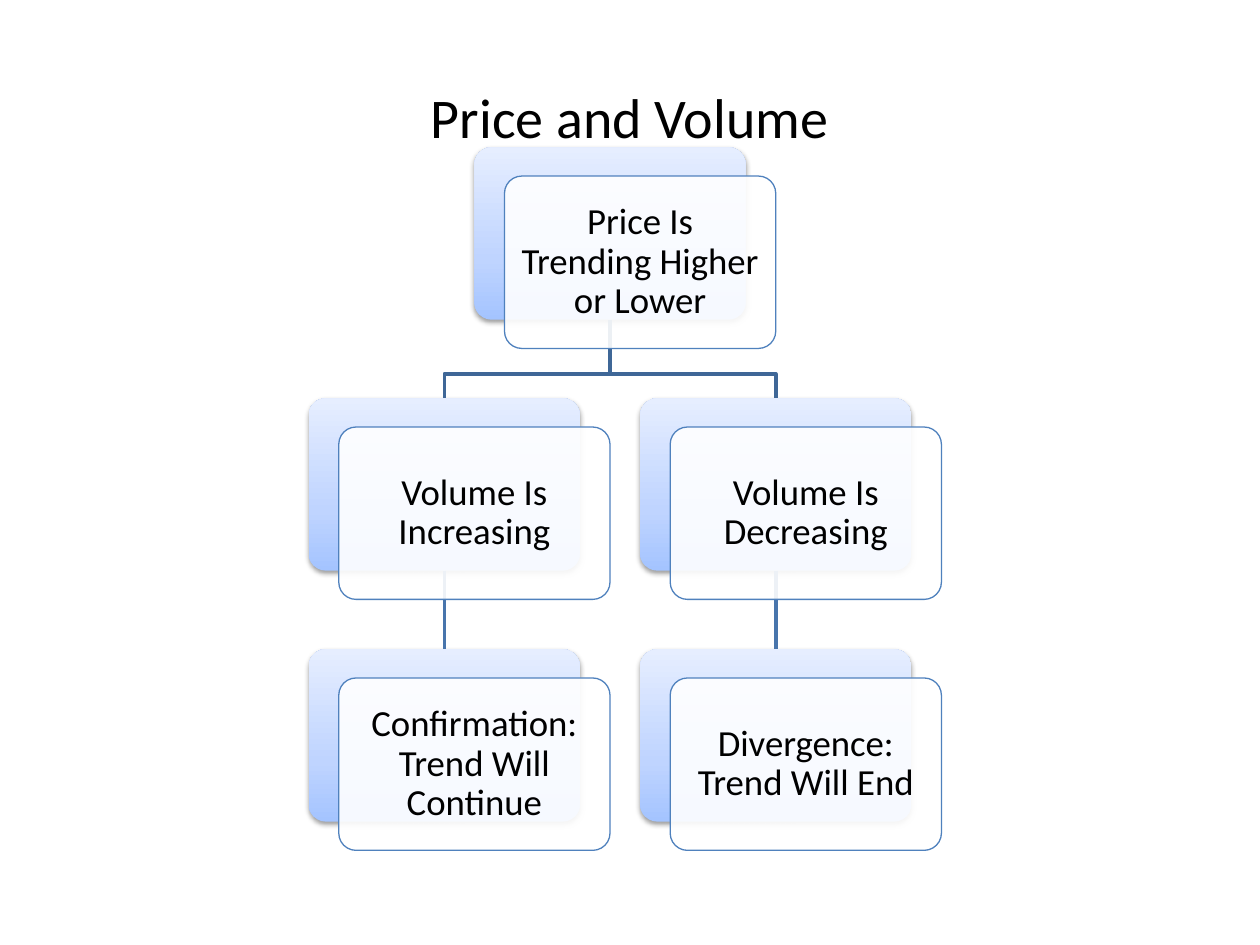
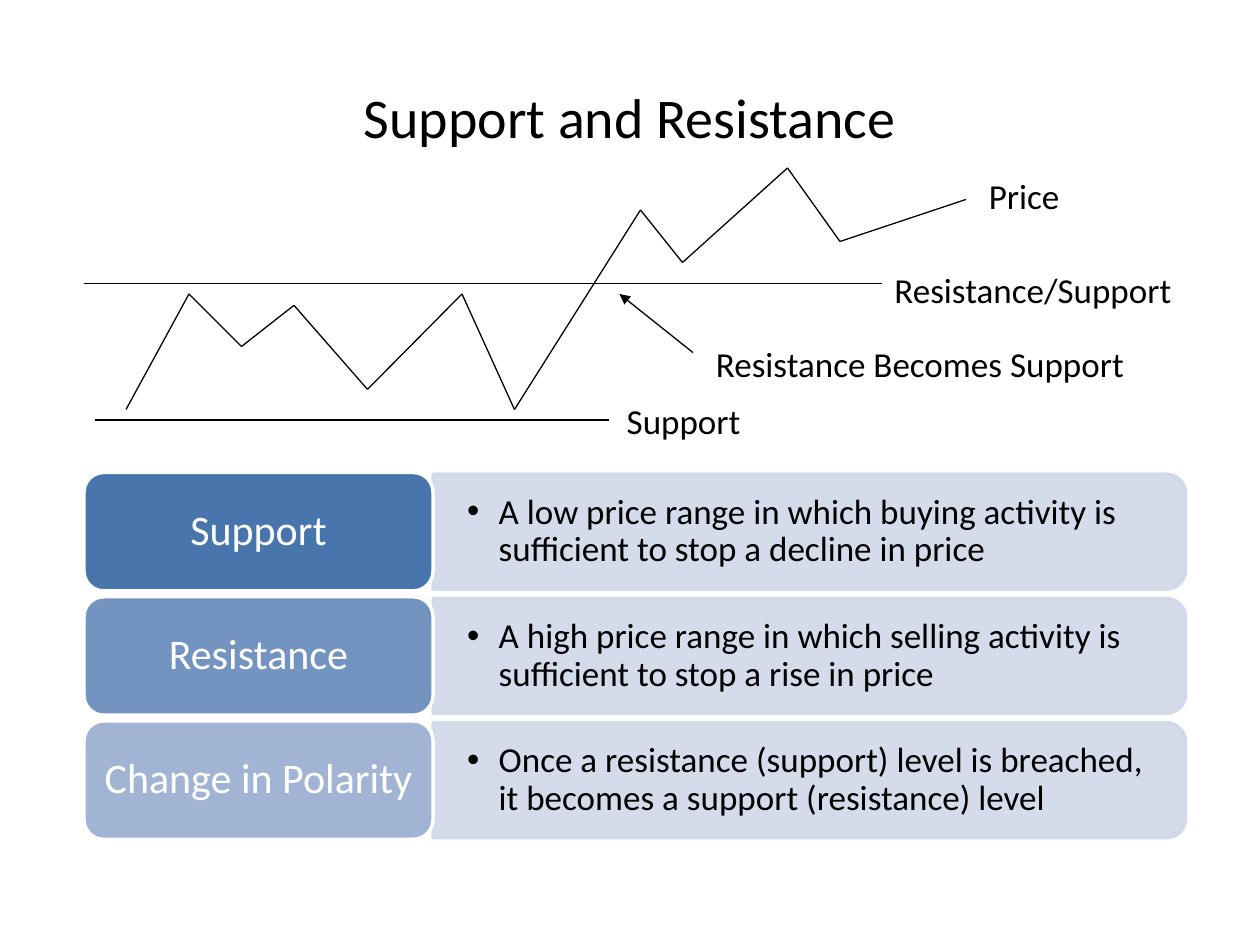
from copy import deepcopy
from dataclasses import dataclass
from itertools import pairwise
from typing import NamedTuple

from lxml import etree
from pptx import Presentation
from pptx.dml.color import RGBColor
from pptx.enum import shapes, text
from pptx.oxml.ns import qn
from pptx.util import Pt

FONT = "Calibri"
BLACK = RGBColor(0x00, 0x00, 0x00)
WHITE = RGBColor(0xFF, 0xFF, 0xFF)
ACCENT = RGBColor(0x4F, 0x81, 0xBD)
STEM = RGBColor(0x48, 0x75, 0xAC)
ELBOW = RGBColor(0x3F, 0x67, 0x97)
STEEL = RGBColor(0x73, 0x93, 0xC1)
MIST = RGBColor(0xA2, 0xB4, 0xD4)
PALE = RGBColor(0xD0, 0xD8, 0xE8)
SKY_DARK = RGBColor(0xA4, 0xC4, 0xFF)
SKY_MID = RGBColor(0xBF, 0xD4, 0xFF)
SKY_LIGHT = RGBColor(0xE6, 0xEE, 0xFF)

CARD_W, CARD_H = 155, 98.5
CARD_LEFT, CARD_TOP = 176.4, 84.2
COL_STEP, ROW_STEP = 189.4, 143.4
FRONT_DX, FRONT_DY = 17.2, 16.4
ELBOW_DROP = 31

TERM_LEFT, TERM_TOP, TERM_W, TERM_H = 48, 270, 199.5, 67.7
TERM_STEP = 71
BAR_W, BAR_H = 430, 65.7
NOTE_W, NOTE_H = 426, 59


class Point(NamedTuple):
    x: float
    y: float


class Box(NamedTuple):
    x: float
    y: float
    w: float
    h: float

    def points(self) -> list[Pt]:
        return [Pt(v) for v in self]


@dataclass
class Card:
    label: str
    col: float
    row: int

    @property
    def back(self) -> Box:
        return Box(CARD_LEFT + self.col * COL_STEP,
                   CARD_TOP + self.row * ROW_STEP, CARD_W, CARD_H)

    @property
    def front(self) -> Box:
        return Box(self.back.x + FRONT_DX, self.back.y + FRONT_DY, CARD_W, CARD_H)


@dataclass
class Term:
    name: str
    meaning: str
    color: RGBColor


@dataclass
class Label:
    label: str
    x: float
    y: float
    w: float


TREND = Card("Price Is Trending Higher or Lower", 0.5, 0)
BRANCHES = [
    (Card("Volume Is Increasing", 0, 1),
     Card("Confirmation: Trend Will Continue", 0, 2)),
    (Card("Volume Is Decreasing", 1, 1),
     Card("Divergence: Trend Will End", 1, 2)),
]

TERMS = [
    Term("Support", "A low price range in which buying activity is "
         "sufficient to stop a decline in price", STEM),
    Term("Resistance", "A high price range in which selling activity is "
         "sufficient to stop a rise in price", STEEL),
    Term("Change in Polarity", "Once a resistance (support) level is breached, "
         "it becomes a support (resistance) level", MIST),
]

PRICE = [Point(*xy) for xy in (
    (72, 234), (108, 168), (138, 198), (168, 174.5), (210, 222.5), (264, 168),
    (294, 234), (366, 120), (390, 150), (450, 96), (480, 138), (552, 114))]
SUPPORT_LINE = Point(54, 240), Point(348, 240)
RESISTANCE_LINE = Point(48, 162), Point(504, 162)
CALLOUT = Point(396, 201.5), Point(354, 168)

LABELS = [
    Label("Support", 351, 225, 204),
    Label("Resistance Becomes Support", 402, 192, 300),
    Label("Resistance/Support", 504, 150, 198),
    Label("Price", 558, 96, 84),
]


def set_alpha(fmt_element, percent: int) -> None:
    for clr in fmt_element.iter(qn("a:srgbClr")):
        etree.SubElement(clr, qn("a:alpha"), val=str(percent * 1000))


def write(sp, content: str, size: float, color: RGBColor = BLACK,
          align=text.PP_ALIGN.CENTER, anchor=text.MSO_ANCHOR.MIDDLE,
          spacing: float | None = None, inset: Point | None = None):
    tf = sp.text_frame
    tf.word_wrap = True
    tf.vertical_anchor = anchor
    if inset:
        tf.margin_left = tf.margin_right = Pt(inset.x)
        tf.margin_top = tf.margin_bottom = Pt(inset.y)
    p = tf.paragraphs[0]
    p.text = content
    p.alignment = align
    p.line_spacing = spacing
    for r in p.runs:
        r.font.name = FONT
        r.font.size = Pt(size)
        r.font.color.rgb = color
    return p


def add_title(slide, content: str) -> None:
    write(slide.shapes.add_textbox(*Box(36, 21.6, 648, 90).points()), content, 32)


def add_shape(slide, kind, box: Box, fill: RGBColor,
              line: RGBColor | None, width: float = 2):
    sp = slide.shapes.add_shape(kind, *box.points())
    sp.shadow.inherit = False
    sp.fill.solid()
    sp.fill.fore_color.rgb = fill
    if line is None:
        sp.line.fill.background()
    else:
        sp.line.color.rgb = line
        sp.line.width = Pt(width)
    return sp


def add_line(slide, start: Point, end: Point, color: RGBColor = BLACK,
             width: float = 0.75, arrow: bool = False):
    cn = slide.shapes.add_connector(
        shapes.MSO_CONNECTOR.STRAIGHT, *(Pt(v) for v in (*start, *end)))
    cn.line.color.rgb = color
    cn.line.width = Pt(width)
    if arrow:
        etree.SubElement(cn.line._get_or_add_ln(), qn("a:tailEnd"), type="triangle")
    etree.SubElement(cn.element.spPr, qn("a:effectLst"))
    return cn


def add_card_back(slide, card: Card):
    sp = add_shape(slide, shapes.MSO_SHAPE.ROUNDED_RECTANGLE, card.back, SKY_MID, None)
    sp.adjustments[0] = 0.1
    sp.fill.gradient()
    sp.fill.gradient_angle = 90
    first, last = sp.fill.gradient_stops
    first.color.rgb, last.color.rgb = SKY_DARK, SKY_LIGHT
    first.position, last.position = 0, 1
    stops = sp.element.spPr.find(f".//{qn('a:gsLst')}")
    middle = deepcopy(stops[0])
    middle.set("pos", "35000")
    middle.find(qn("a:srgbClr")).set("val", str(SKY_MID))
    stops.insert(1, middle)
    shadow = etree.SubElement(
        sp.element.spPr.find(qn("a:effectLst")), qn("a:outerShdw"),
        blurRad=str(Pt(3.1)), dist=str(Pt(1.6)), dir="5400000", rotWithShape="0")
    etree.SubElement(shadow, qn("a:srgbClr"), val=str(BLACK))
    set_alpha(shadow, 38)
    return sp


def add_card_front(slide, card: Card) -> None:
    sp = add_shape(slide, shapes.MSO_SHAPE.ROUNDED_RECTANGLE, card.front,
                   WHITE, ACCENT, 0.75)
    sp.adjustments[0] = 0.1
    set_alpha(sp.element.spPr.find(qn("a:solidFill")), 90)
    write(sp, card.label, 21, spacing=0.9, inset=Point(6.3, 6.3))


def add_elbow(slide, parent: Card, child: Card) -> None:
    start_x = parent.back.x + CARD_W / 2
    end_x = child.back.x + CARD_W / 2
    start_y = parent.back.y + CARD_H
    bend_y = start_y + ELBOW_DROP
    fb = slide.shapes.build_freeform(Pt(start_x), Pt(start_y))
    fb.add_line_segments(
        [(Pt(start_x), Pt(bend_y)), (Pt(end_x), Pt(bend_y)),
         (Pt(end_x), Pt(child.back.y))], close=False)
    sp = fb.convert_to_shape()
    sp.shadow.inherit = False
    sp.fill.background()
    sp.line.color.rgb = ELBOW
    sp.line.width = Pt(2)


def add_term(slide, term: Term, index: int) -> None:
    top = TERM_TOP + index * TERM_STEP
    mid_y = top + TERM_H / 2
    bar_left = TERM_LEFT + TERM_W
    bar = add_shape(slide, shapes.MSO_SHAPE.ROUND_2_SAME_RECTANGLE,
                    Box(bar_left + (BAR_W - BAR_H) / 2, mid_y - BAR_W / 2, BAR_H, BAR_W),
                    PALE, PALE)
    bar.rotation = 90
    set_alpha(bar.element.spPr, 90)

    note = slide.shapes.add_textbox(
        *Box(bar_left, mid_y - NOTE_H / 2, NOTE_W, NOTE_H).points())
    p = write(note, term.meaning, 20, align=text.PP_ALIGN.LEFT,
              spacing=0.9, inset=Point(19.5, 10))
    p.level = 1
    props = p._p.get_or_add_pPr()
    props.set("marL", str(Pt(18)))
    props.set("indent", str(Pt(-18)))
    etree.SubElement(props, qn("a:buFont"), typeface="Arial")
    etree.SubElement(props, qn("a:buChar"), char="•")

    pill = add_shape(slide, shapes.MSO_SHAPE.ROUNDED_RECTANGLE,
                     Box(TERM_LEFT, top, TERM_W, TERM_H), term.color, WHITE)
    write(pill, term.name, 24, WHITE, spacing=0.9)


def add_label(slide, label: Label) -> None:
    sp = slide.shapes.add_textbox(*Box(label.x, label.y, label.w, 31.5).points())
    write(sp, label.label, 20, align=text.PP_ALIGN.LEFT, anchor=text.MSO_ANCHOR.TOP)
    sp.text_frame.auto_size = text.MSO_AUTO_SIZE.SHAPE_TO_FIT_TEXT


def build_price_and_volume(slide) -> None:
    add_title(slide, "Price and Volume")
    add_card_back(slide, TREND)
    for volume, outcome in BRANCHES:
        upper = add_card_back(slide, volume)
        lower = add_card_back(slide, outcome)
        add_elbow(slide, TREND, volume)
        stem = add_line(slide, Point(0, 0), Point(0, 0), STEM, 2)
        stem.begin_connect(upper, 2)
        stem.end_connect(lower, 0)
    for card in (TREND, *BRANCHES[0], *BRANCHES[1]):
        add_card_front(slide, card)


def build_support_and_resistance(slide) -> None:
    add_title(slide, "Support and Resistance")
    for index, term in enumerate(TERMS):
        add_term(slide, term, index)
    for start, end in (SUPPORT_LINE, RESISTANCE_LINE, *pairwise(PRICE)):
        add_line(slide, start, end)
    add_line(slide, *CALLOUT, arrow=True)
    for label in LABELS:
        add_label(slide, label)


def main() -> None:
    prs = Presentation()
    prs.slide_width, prs.slide_height = Pt(720), Pt(540)
    for build in (build_price_and_volume, build_support_and_resistance):
        build(prs.slides.add_slide(prs.slide_layouts[6]))
    prs.save("out.pptx")


if __name__ == "__main__":
    main()
